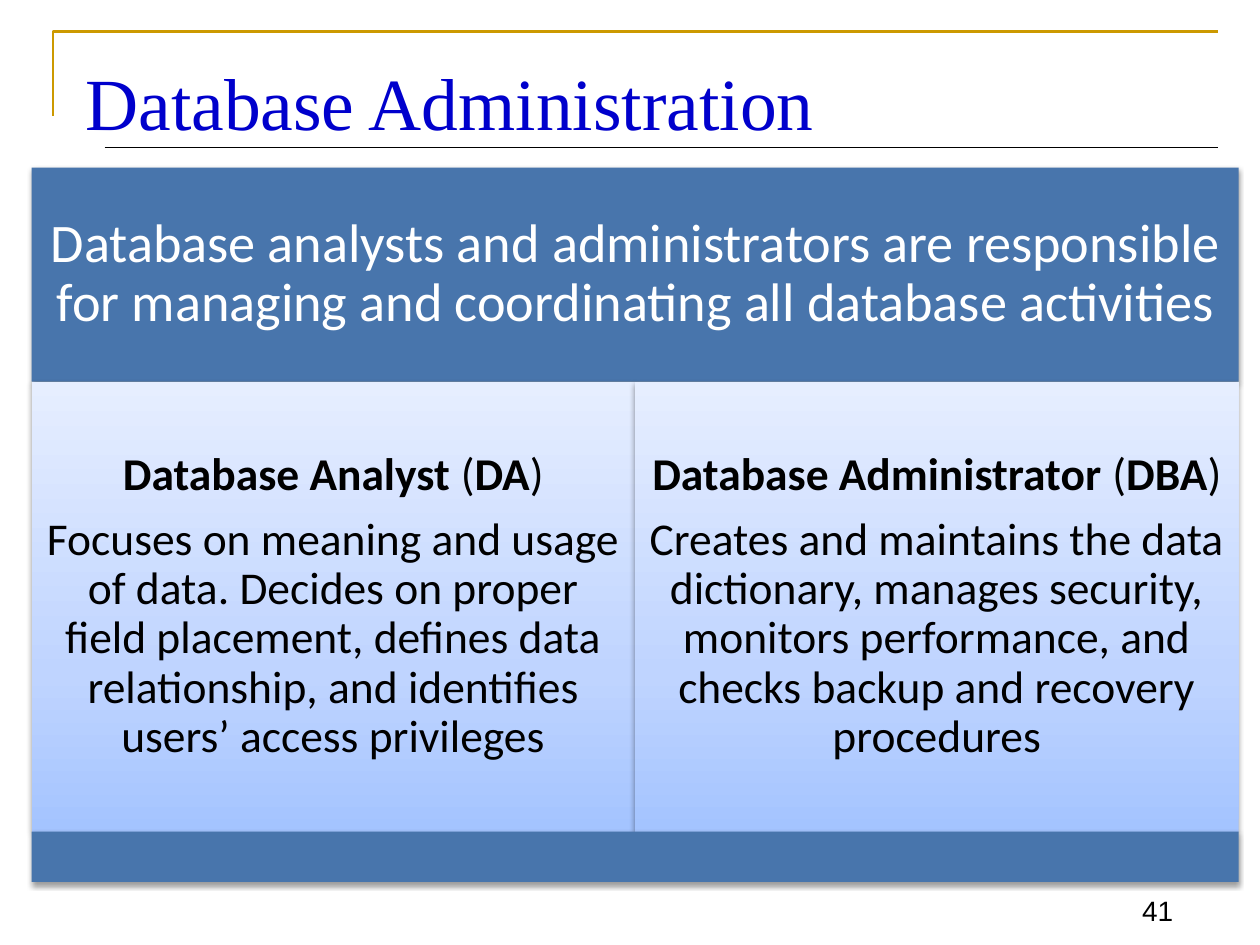
from lxml import etree
from pptx import Presentation
from pptx.dml.color import RGBColor
from pptx.enum.shapes import MSO_CONNECTOR, MSO_SHAPE
from pptx.enum.text import MSO_ANCHOR as ANCHOR, PP_ALIGN as ALIGN
from pptx.oxml import parse_xml
from pptx.oxml.ns import nsdecls, qn
from pptx.util import Inches, Pt

TITLE = "Database Administration"
PAGE = "41"
SUMMARY = ("Database analysts and administrators are responsible for managing "
           "and coordinating all database activities")
ROLES = [
    ("Database Analyst", "DA",
     "Focuses on meaning and usage of data. Decides on proper field placement, "
     "defines data relationship, and identifies users’ access privileges"),
    ("Database Administrator", "DBA",
     "Creates and maintains the data dictionary, manages security, monitors "
     "performance, and checks backup and recovery procedures"),
]

BLUE, BLACK, WHITE = "4875AC", "000000", "FFFFFF"
ROLE_GRADIENT = [(0, "A4C4FF"), (35, "BFD4FF"), (100, "E6EEFF")]
LEFT, TOP, WIDTH = 0.25, 1.33, 9.58
HEADER_H, ROLE_H, FOOTER_H = 1.7, 3.57, 0.4

prs = Presentation()
prs.slide_width, prs.slide_height = Inches(10), Inches(7.5)
slide = prs.slides.add_slide(prs.slide_layouts[6])
shapes = slide.shapes


def rgb(color):
    return RGBColor.from_string(color)


def inches(*lengths):
    return [Inches(length) for length in lengths]


def set_text(frame, paragraphs, font, size, color, align, anchor, margins):
    """Fill a frame; each paragraph is a list of (text, bold) runs."""
    frame.word_wrap = True
    frame.vertical_anchor = anchor
    (frame.margin_left, frame.margin_top,
     frame.margin_right, frame.margin_bottom) = inches(*margins)
    for index, runs in enumerate(paragraphs):
        para = frame.add_paragraph() if index else frame.paragraphs[0]
        para.alignment = align
        for text, bold in runs:
            run = para.add_run()
            run.text = text
            run.font.name, run.font.size, run.font.bold = font, Pt(size), bold
            run.font.color.rgb = rgb(color)


def set_gradient(panel, stops):
    panel.fill.gradient()
    panel.fill.gradient_angle = 90  # counter-clockwise: bottom to top
    stop_list = panel._element.spPr.find(qn("a:gradFill")).find(qn("a:gsLst"))
    for old_stop in list(stop_list):
        stop_list.remove(old_stop)
    for percent, color in stops:
        stop = etree.SubElement(stop_list, qn("a:gs"), pos=str(percent * 1000))
        etree.SubElement(stop, qn("a:srgbClr"), val=color)


def add_panel(left, top, width, height):
    """Add a borderless rectangle with a soft shadow below it."""
    panel = shapes.add_shape(MSO_SHAPE.RECTANGLE, *inches(left, top, width, height))
    panel.fill.solid()
    panel.fill.fore_color.rgb = rgb(BLUE)
    panel.line.fill.background()
    panel.shadow.inherit = False
    effects = panel._element.spPr.find(qn("a:effectLst"))
    effects.append(parse_xml(
        f'<a:outerShdw {nsdecls("a")} blurRad="{Pt(3.1)}" dist="{Pt(1.6)}" '
        'dir="5400000" rotWithShape="0"><a:srgbClr val="000000">'
        '<a:alpha val="38000"/></a:srgbClr></a:outerShdw>'))
    return panel


def set_panel_text(panel, paragraphs, size, color, margin):
    set_text(panel.text_frame, paragraphs, "Calibri", size, color,
             ALIGN.CENTER, ANCHOR.MIDDLE, [margin] * 4)
    for para in panel.text_frame.paragraphs:
        para.line_spacing = 0.9
    for para in panel.text_frame.paragraphs[:-1]:
        para.space_after = Pt(size * 0.35)


# Title corner and rule
corner_path = shapes.build_freeform(Inches(0.42), Inches(0.92))
corner_path.add_line_segments([inches(0.42, 0.25), inches(9.67, 0.25)], close=False)
corner = corner_path.convert_to_shape()
corner.fill.background()
corner.line.color.rgb = rgb("CC9900")
corner.line.width = Pt(1.5)
corner.shadow.inherit = False

rule = shapes.add_connector(MSO_CONNECTOR.STRAIGHT, *inches(0.83, 1.17, 9.67, 1.17))
rule.line.color.rgb = rgb(BLACK)
rule.line.width = Pt(0.75)
etree.SubElement(rule._element.spPr, qn("a:effectLst"))

# Page number and title
page = shapes.add_textbox(*inches(8.75, 6.92, 0.66, 0.49))
set_text(page.text_frame, [[(PAGE, False)]], "Arial", 16, BLACK,
         ALIGN.RIGHT, ANCHOR.BOTTOM, (0.1, 0.05, 0.1, 0.05))
title = shapes.add_textbox(*inches(0.58, 0.33, 9.08, 0.75))
set_text(title.text_frame, [[(TITLE, False)]], "Times New Roman", 42, "0000CC",
         ALIGN.LEFT, ANCHOR.TOP, (0.1, 0.12, 0.1, 0))

# Summary band, one panel per role, closing band
summary = add_panel(LEFT, TOP, WIDTH, HEADER_H)
set_panel_text(summary, [[(SUMMARY, False)]], 31, WHITE, 0.13)

role_top = TOP + HEADER_H
role_width = WIDTH / len(ROLES)
for column, (role, short, duties) in enumerate(ROLES):
    panel = add_panel(LEFT + column * role_width, role_top, role_width, ROLE_H)
    set_gradient(panel, ROLE_GRADIENT)
    heading = [(role, True), (" (", False), (short, True), (")", False)]
    set_panel_text(panel, [heading, [(duties, False)]], 26, BLACK, 0.11)

add_panel(LEFT, role_top + ROLE_H, WIDTH, FOOTER_H)

prs.save("out.pptx")
